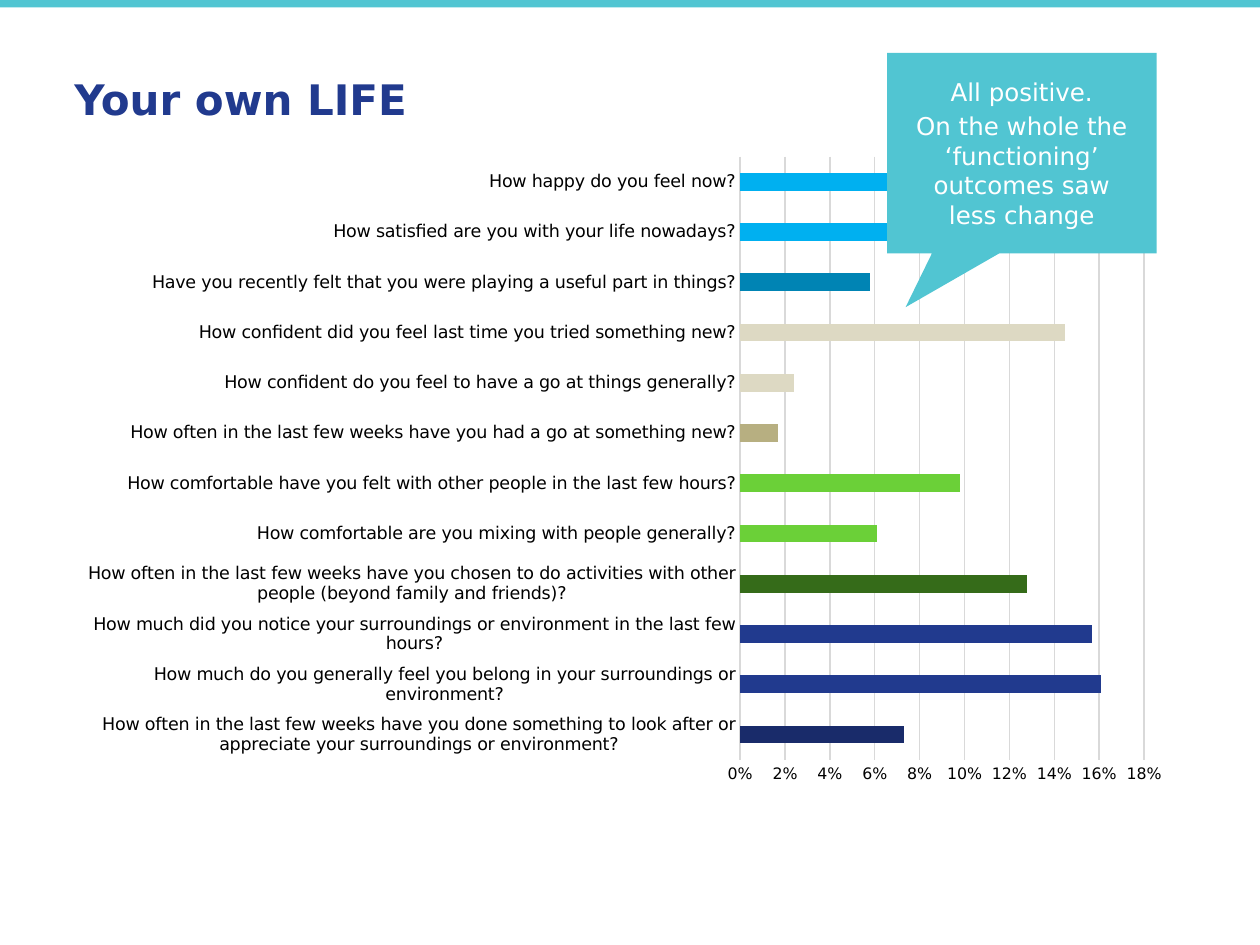
import pptx
import pptx.util
import pptx.chart.data
from lxml import etree
from pptx.dml.color import RGBColor
from pptx.enum.chart import XL_CHART_TYPE, XL_TICK_MARK
from pptx.enum.shapes import MSO_SHAPE
from pptx.enum.text import MSO_ANCHOR, PP_ALIGN
from pptx.oxml.ns import qn

Inches, Pt = pptx.util.Inches, pptx.util.Pt

# Content
FONT = "DejaVu Sans"
COLORS = {
    "teal": "51C5D2", "navy": "213A8E", "dark_navy": "192B6A",
    "dark_green": "356B19", "green": "6BD038", "olive": "B7AF81",
    "sand": "DDD9C3", "dark_blue": "0084B4", "blue": "00B0F0",
    "grid": "D9D9D9", "black": "000000", "white": "FFFFFF",
}
TITLE = "Your own LIFE"
CALLOUT = ["All positive.", "On the whole the ‘functioning’ outcomes saw\vless change"]
# Question, change, bar colour; from the bottom bar up
RESULTS = [
    ("How often in the last few weeks have you done something to look after or "
     "appreciate your surroundings or environment?", 0.073, "dark_navy"),
    ("How much do you generally feel you belong in your surroundings or "
     "environment?", 0.161, "navy"),
    ("How much did you notice your surroundings or environment in the last few "
     "hours?", 0.157, "navy"),
    ("How often in the last few weeks have you chosen to do activities with other "
     "people (beyond family and friends)?", 0.128, "dark_green"),
    ("How comfortable are you mixing with people generally?", 0.061, "green"),
    ("How comfortable have you felt with other people in the last few hours?",
     0.098, "green"),
    ("How often in the last few weeks have you had a go at something new?",
     0.017, "olive"),
    ("How confident do you feel to have a go at things generally?", 0.024, "sand"),
    ("How confident did you feel last time you tried something new?", 0.145, "sand"),
    ("Have you recently felt that you were playing a useful part in things?",
     0.058, "dark_blue"),
    ("How satisfied are you with your life nowadays?", 0.129, "blue"),
    ("How happy do you feel now?", 0.082, "blue"),
]
PLOT_LAYOUT = {"x": 0.603, "y": 0.02, "w": 0.361, "h": 0.924}


def rgb(name):
    return RGBColor.from_string(COLORS[name])


def set_font(font, size, color, bold=False):
    font.name, font.size, font.bold = FONT, Pt(size), bold
    font.color.rgb = rgb(color)


def add_block(s, kind, left, top, width, height):
    sp = s.shapes.add_shape(kind, Inches(left), Inches(top), Inches(width), Inches(height))
    sp.shadow.inherit = False
    sp.fill.solid()
    sp.fill.fore_color.rgb = rgb("teal")
    sp.line.fill.background()
    return sp


def set_plot_layout(chart, fractions):
    plot_area = chart._chartSpace.chart.plotArea
    for old in plot_area.findall(qn("c:layout")):
        plot_area.remove(old)
    layout = etree.Element(qn("c:layout"))
    manual = etree.SubElement(layout, qn("c:manualLayout"))
    settings = {"layoutTarget": "inner", "xMode": "edge", "yMode": "edge", **fractions}
    for tag, value in settings.items():
        etree.SubElement(manual, qn(f"c:{tag}")).set("val", str(value))
    plot_area.insert(0, layout)


prs = pptx.Presentation()
prs.slide_width, prs.slide_height = Inches(10), Inches(7.5)
s = prs.slides.add_slide(prs.slide_layouts[6])

# Top band
add_block(s, MSO_SHAPE.RECTANGLE, 0, 0, 10, 0.06)

# Title
sp = s.shapes.add_textbox(Inches(0), Inches(0.52), Inches(4.46), Inches(0.53))
tf = sp.text_frame
tf.word_wrap = True
tf.vertical_anchor = MSO_ANCHOR.MIDDLE
tf.margin_left = Inches(0.59)
tf.text = TITLE
set_font(tf.paragraphs[0].font, 24, "navy", bold=True)

# Bar chart
data = pptx.chart.data.CategoryChartData(number_format="0%")
data.categories = [question for question, _, _ in RESULTS]
data.add_series("Series 1", [value for _, value, _ in RESULTS])
chart = s.shapes.add_chart(XL_CHART_TYPE.BAR_CLUSTERED, Inches(0.52), Inches(1.14),
                           Inches(8.88), Inches(5.18), data).chart
chart.has_legend = chart.has_title = False
set_font(chart.font, 10, "black")
set_plot_layout(chart, PLOT_LAYOUT)

plot = chart.plots[0]
plot.gap_width = 182
plot.vary_by_categories = False
series = plot.series[0]
series.format.fill.solid()
series.format.fill.fore_color.rgb = rgb("navy")
for i, (_, _, color) in enumerate(RESULTS):
    if color != "navy":
        fill = series.points[i].format.fill
        fill.solid()
        fill.fore_color.rgb = rgb(color)

# Axes
cat_axis, val_axis = chart.category_axis, chart.value_axis
for axis, size in ((cat_axis, 10), (val_axis, 9)):
    axis.major_tick_mark = axis.minor_tick_mark = XL_TICK_MARK.NONE
    set_font(axis.tick_labels.font, size, "black")
val_axis.minimum_scale, val_axis.maximum_scale, val_axis.major_unit = 0, 0.18, 0.02
val_axis.tick_labels.number_format = "0%"
val_axis.tick_labels.number_format_is_linked = False
val_axis.format.line.fill.background()
val_axis.has_major_gridlines = True
for line in (cat_axis.format.line, val_axis.major_gridlines.format.line):
    line.color.rgb = rgb("grid")
    line.width = Pt(0.75)

# Callout
sp = add_block(s, MSO_SHAPE.RECTANGULAR_CALLOUT, 7.04, 0.42, 2.14, 1.59)
sp.adjustments[0], sp.adjustments[1] = -0.431, 0.769
tf = sp.text_frame
tf.word_wrap = True
tf.vertical_anchor = MSO_ANCHOR.MIDDLE
tf.text = "\n".join(CALLOUT)
for i, p in enumerate(tf.paragraphs):
    p.alignment = PP_ALIGN.CENTER
    p.space_before = Pt(2.8 if i else 0)
    set_font(p.font, 14, "white")

prs.save("out.pptx")
